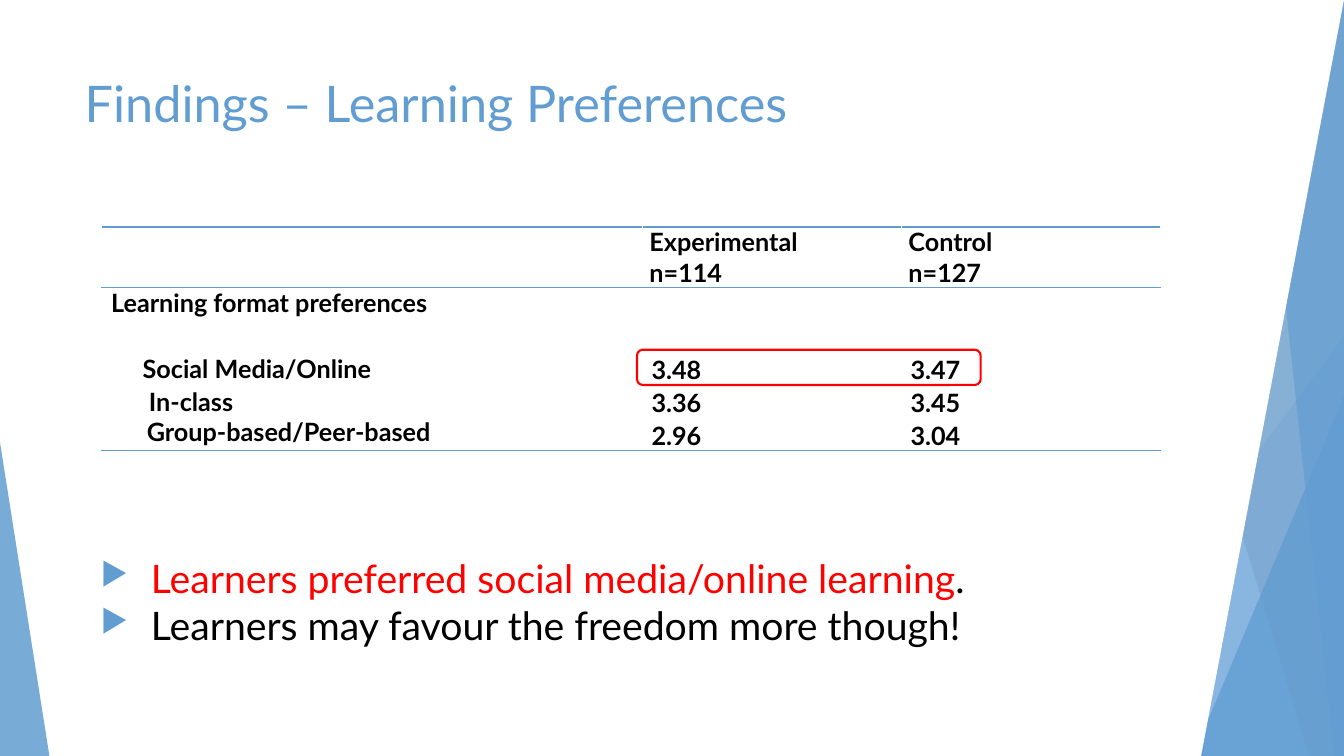
"""Build the learning preferences findings slide."""
from lxml import etree
from pptx import Presentation
from pptx.dml.color import RGBColor
from pptx.enum import shapes, text as text_enum
from pptx.oxml import ns
from pptx.util import Pt

SKY = RGBColor(0x62, 0x9D, 0xD1)
PALE = RGBColor(0xA1, 0xC4, 0xE3)
BRIGHT = RGBColor(0x29, 0x7F, 0xD5)
NAVY = RGBColor(0x1F, 0x5F, 0xA0)
RED = RGBColor(0xFF, 0, 0)
BLACK = RGBColor(0, 0, 0)
WHITE = RGBColor(0xFF, 0xFF, 0xFF)

FONT = "Lato"
WIDTH, HEIGHT = 960, 540
TITLE = "Findings – Learning Preferences"
GROUPS = [("Experimental", "n=114"), ("Control", "n=127")]
HEADING = "Learning format preferences"
FORMATS = [
    ("Social Media/Online", 24, 25.5),
    ("In-class", 28.5, 2),
    ("Group-based/Peer-based", 27, 0),
]
SCORES = [("3.48", "3.36", "2.96"), ("3.47", "3.45", "3.04")]
BULLETS = [
    [("Learners preferred social media/online learning", RED), (".", BLACK)],
    [("Learners may favour the freedom more though!", BLACK)],
]
TABLE_LEFT, TABLE_TOP = 72.72, 162.2
COLUMNS = [386, 185, 185]
ROWS = [43.2, 116.4]

FACETS = [
    ("band", [(895.7, 0), (WIDTH, 0), (WIDTH, HEIGHT), (758.2, HEIGHT)], SKY, 30),
    ("band", [(775.4, 0), (WIDTH, 0), (WIDTH, HEIGHT), (861.8, HEIGHT)], SKY, 20),
    ("triangle", (737, 240, 223, 300, 1), BRIGHT, 72),
    ("band", [(771.8, 0), (WIDTH, 0), (WIDTH, HEIGHT), (934.6, HEIGHT)], NAVY, 70),
    ("band", [(939.6, 0), (WIDTH, 0), (WIDTH, HEIGHT), (859, HEIGHT)], PALE, 70),
    ("band", [(895, 0), (WIDTH, 0), (WIDTH, HEIGHT), (953.3, HEIGHT)], SKY, 65),
    ("triangle", (852.2, 283, 107.8, 257, 1), SKY, 80),
    ("triangle", (0, 316, 35.3, 224, 0), SKY, 85),
    ("band", [(627.8, 0), (WIDTH, 0), (857.5, HEIGHT), (627.8, HEIGHT)], WHITE, 100),
]


def add_child(parent, tag, **attributes):
    return etree.SubElement(parent, ns.qn(tag), attributes)


def write(para, text, size=18, color=BLACK, bold=False):
    span = para.add_run()
    span.text = text
    span.font.name = FONT
    span.font.size = Pt(size)
    span.font.bold = bold
    span.font.color.rgb = color


def indent(para, left, first=0):
    properties = para._p.get_or_add_pPr()
    properties.set("marL", str(Pt(left)))
    properties.set("indent", str(Pt(first)))
    return properties


def fill_cell(cell, lines):
    for number, (line, left, before) in enumerate(lines):
        frame = cell.text_frame
        para = frame.add_paragraph() if number else frame.paragraphs[0]
        para.space_before = Pt(before)
        indent(para, left)
        write(para, line, bold=True)


def add_facet(page, kind, outline, color, opacity):
    if kind == "band":
        builder = page.shapes.build_freeform(*outline[0], scale=Pt(1))
        builder.add_line_segments(outline[1:], close=True)
        facet = builder.convert_to_shape()
    else:
        *place, apex = outline
        facet = page.shapes.add_shape(
            shapes.MSO_SHAPE.ISOSCELES_TRIANGLE, *map(Pt, place))
        facet.adjustments[0] = apex
    facet.shadow.inherit = False
    facet.line.fill.background()
    facet.fill.solid()
    facet.fill.fore_color.rgb = color
    if opacity < 100:
        tint = facet.element.spPr.find(".//" + ns.qn("a:srgbClr"))
        add_child(tint, "a:alpha", val=str(opacity * 1000))


def style_cell(cell):
    cell.margin_left = cell.margin_right = Pt(5.2)
    cell.margin_top = cell.margin_bottom = 0
    properties = cell._tc.get_or_add_tcPr()
    for side, color in zip("LRTB", (WHITE, WHITE, SKY, SKY)):
        edge = add_child(properties, "a:ln" + side, w=str(Pt(1)))
        add_child(add_child(edge, "a:solidFill"), "a:srgbClr", val=str(color))
    cell.fill.background()


def add_scores_table(page):
    table = page.shapes.add_table(
        len(ROWS), len(COLUMNS), Pt(TABLE_LEFT), Pt(TABLE_TOP),
        Pt(sum(COLUMNS)), Pt(sum(ROWS))).table
    table.first_row = table.horz_banding = False
    for column, width in zip(table.columns, COLUMNS):
        column.width = Pt(width)
    for row, height in zip(table.rows, ROWS):
        row.height = Pt(height)
    for cell in table.iter_cells():
        style_cell(cell)
    fill_cell(table.cell(1, 0), [(HEADING, 1.5, 0), *FORMATS])
    for number, (group, scores) in enumerate(zip(GROUPS, SCORES), 1):
        fill_cell(table.cell(0, number), [(line, 0, 0) for line in group])
        score_cell = table.cell(1, number)
        fill_cell(score_cell, [(score, 1.5, 2) for score in scores])
        score_cell.vertical_anchor = text_enum.MSO_ANCHOR.BOTTOM


def add_bullets(page):
    box = page.shapes.add_textbox(Pt(28.8), Pt(392.4), Pt(811.4), Pt(74.9))
    frame = box.text_frame
    frame.word_wrap = True
    for number, spans in enumerate(BULLETS):
        para = frame.add_paragraph() if number else frame.paragraphs[0]
        properties = indent(para, 72, -36)
        add_child(add_child(properties, "a:buClr"), "a:srgbClr", val=str(SKY))
        add_child(properties, "a:buSzPct", val="80000")
        add_child(properties, "a:buChar", char="▶")
        for words, color in spans:
            write(para, words, size=28, color=color)


def main():
    deck = Presentation()
    deck.slide_width, deck.slide_height = Pt(WIDTH), Pt(HEIGHT)
    page = deck.slides.add_slide(deck.slide_layouts[5])
    for facet in FACETS:
        add_facet(page, *facet)

    title = page.shapes.title
    title.element.getparent().append(title.element)
    title.left, title.top, title.width, title.height = map(
        Pt, (53.3, 48.2, 676.8, 54.7))
    title.text_frame.vertical_anchor = text_enum.MSO_ANCHOR.TOP
    heading = title.text_frame.paragraphs[0]
    heading.alignment = text_enum.PP_ALIGN.LEFT
    write(heading, TITLE, size=36, color=SKY)

    add_scores_table(page)
    add_bullets(page)

    highlight = page.shapes.add_shape(
        shapes.MSO_SHAPE.ROUNDED_RECTANGLE,
        Pt(455), Pt(249.8), Pt(245.5), Pt(25.2))
    highlight.shadow.inherit = False
    highlight.fill.background()
    highlight.line.color.rgb = RED
    highlight.line.width = Pt(1.5)
    deck.save("out.pptx")


if __name__ == "__main__":
    main()
